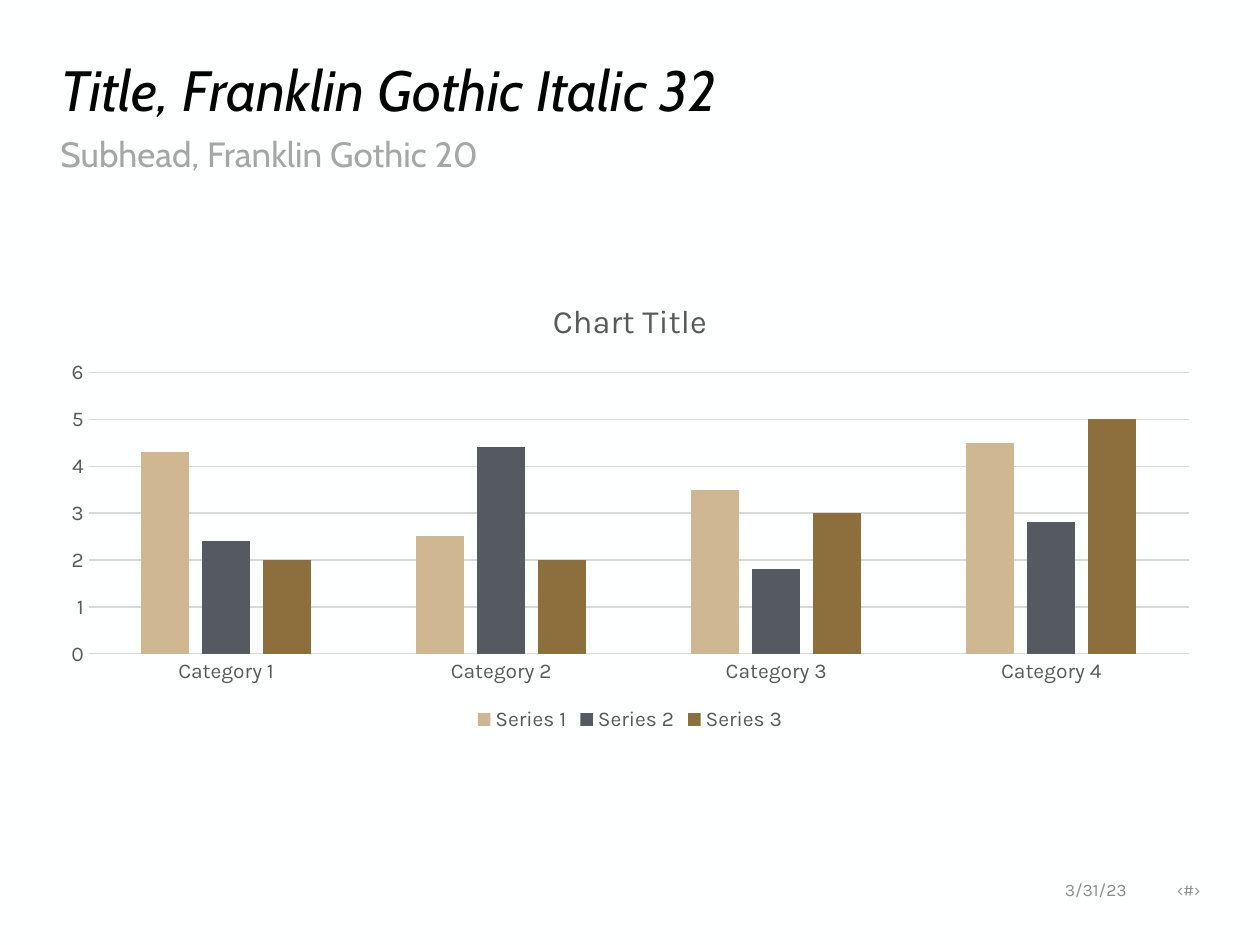
from pptx import Presentation
from pptx.chart.data import CategoryChartData as Data
from pptx.dml.color import RGBColor as RGB
from pptx.enum.chart import XL_CHART_TYPE as Kind, XL_LEGEND_POSITION as Spot, XL_TICK_MARK as Tick
from pptx.enum.text import MSO_ANCHOR as Anchor
from pptx.oxml.ns import qn
from pptx.util import Pt
from lxml.etree import SubElement as Sub

PAPER = RGB(0xFE, 0xFF, 0xFF)
BLACK = RGB(0, 0, 0)
SUBTLE = RGB(0xA6, 0xA6, 0xA6)
FOOT = RGB(0x8C, 0x8C, 0x8C)
LABEL = RGB(0x59, 0x59, 0x59)
GRID = RGB(0xD9, 0xD9, 0xD9)
TAN = RGB(0xCF, 0xB8, 0x91)
SLATE = RGB(0x55, 0x59, 0x60)
BRONZE = RGB(0x8D, 0x6F, 0x3D)

GROUPS = [f"Category {n}" for n in range(1, 5)]
SERIES = [
    ("Series 1", (4.3, 2.5, 3.5, 4.5), TAN),
    ("Series 2", (2.4, 4.4, 1.8, 2.8), SLATE),
    ("Series 3", (2, 2, 3, 5), BRONZE),
]


class Deck:
    head = "Cabin"
    body = "Karla"

    def __init__(self):
        self.file = Presentation()
        self.file.slide_width, self.file.slide_height = Pt(720), Pt(540)
        self.slide = self.file.slides.add_slide(self.file.slide_layouts[6])
        fill = self.slide.background.fill
        fill.solid()
        fill.fore_color.rgb = PAPER

    def style(self, font, face, size, color, italic=False):
        font.name, font.size = face, Pt(size)
        font.bold, font.italic = False, italic
        font.color.rgb = color

    def text(self, box, words, face, size, color, italic=False,
             anchor=Anchor.MIDDLE, space=0.9, inset=7.2, tab=None):
        frame = self.slide.shapes.add_textbox(*map(Pt, box)).text_frame
        frame.word_wrap = True
        frame.vertical_anchor = anchor
        frame.margin_left = Pt(inset)
        para = frame.paragraphs[0]
        para.text = words
        para.line_spacing = space
        if tab:
            tabs = Sub(para._p.get_or_add_pPr(), qn("a:tabLst"))
            Sub(tabs, qn("a:tab"), pos=str(Pt(tab)), algn="l")
        self.style(para.font, face, size, color, italic)

    def axis(self, axis):
        axis.major_tick_mark = axis.minor_tick_mark = Tick.NONE
        self.style(axis.tick_labels.font, self.body, 12, LABEL)

    def rule(self, line):
        line.color.rgb = GRID
        line.width = Pt(0.75)

    def columns(self, box, title, groups, series):
        data = Data()
        data.categories = groups
        for name, values, _ in series:
            data.add_series(name, values)
        chart = self.slide.shapes.add_chart(
            Kind.COLUMN_CLUSTERED, *map(Pt, box), data).chart
        self.style(chart.font, self.body, 10, BLACK)

        chart.has_title = True
        para = chart.chart_title.text_frame.paragraphs[0]
        para.text = title
        self.style(para.font, self.body, 18.6, LABEL)
        chart.chart_title.include_in_layout = False

        chart.has_legend = True
        chart.legend.position = Spot.BOTTOM
        chart.legend.include_in_layout = False
        self.style(chart.legend.font, self.body, 12, LABEL)

        base, scale = chart.category_axis, chart.value_axis
        self.axis(base)
        self.axis(scale)
        self.rule(base.format.line)
        scale.format.line.fill.background()
        self.rule(scale.major_gridlines.format.line)

        plot = chart.plots[0]
        plot.gap_width, plot.overlap = 219, -27
        plot.vary_by_categories = False
        for bar, (_, _, color) in zip(plot.series, series):
            bar.format.fill.solid()
            bar.format.fill.fore_color.rgb = color


def main():
    deck = Deck()
    deck.columns((27.4, 158.4, 665.3, 262.8), "Chart Title", GROUPS, SERIES)
    deck.text((27.4, 30.2, 665.3, 46.1), "Title, Franklin Gothic Italic 32",
              deck.head, 32.4, BLACK, italic=True)
    deck.text((27.4, 74.9, 666, 28.8), "Subhead, Franklin Gothic 20",
              deck.head, 20, SUBTLE, anchor=Anchor.TOP)
    deck.text((587.5, 495.4, 105.8, 25.2), "3/31/23\t‹#›",
              deck.body, 10, FOOT, space=1, inset=21, tab=64)
    deck.file.save("out.pptx")


if __name__ == "__main__":
    main()
